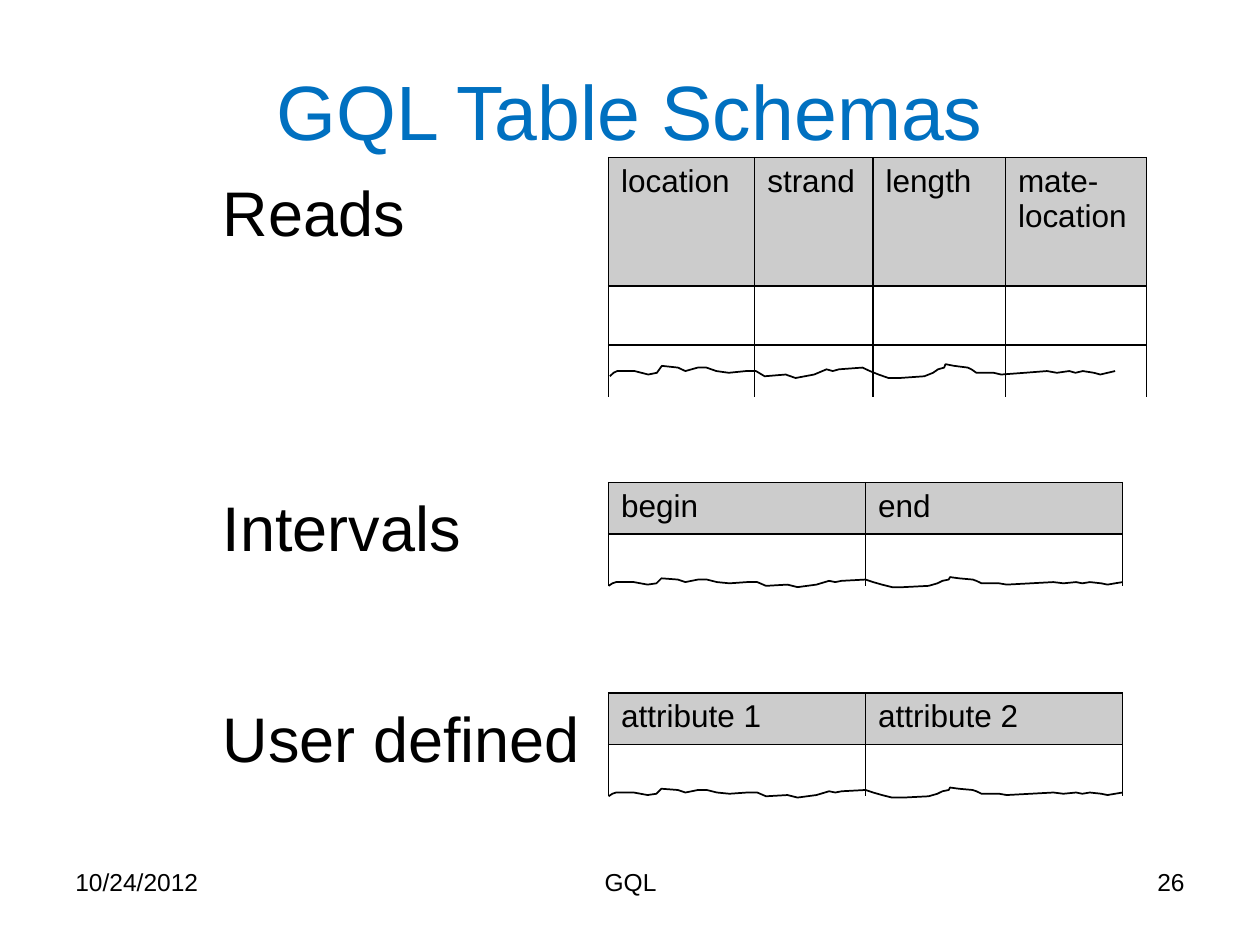
from dataclasses import dataclass

from lxml import etree
from pptx import Presentation
from pptx.dml.color import RGBColor
from pptx.enum.text import MSO_ANCHOR, MSO_AUTO_SIZE, PP_ALIGN
from pptx.oxml.ns import qn
from pptx.util import Inches, Pt

LEFT, CENTER, RIGHT = PP_ALIGN.LEFT, PP_ALIGN.CENTER, PP_ALIGN.RIGHT
TOP, BOTTOM = MSO_ANCHOR.TOP, MSO_ANCHOR.BOTTOM
FIT_SHAPE = MSO_AUTO_SIZE.SHAPE_TO_FIT_TEXT
FONT = "Arial"
BLACK, BLUE, GRAY = "000000", "0070C0", "CCCCCC"
TABLE_LEFT = 4.83
LABEL_LEFT = 1.67
FOOTER_TOP, FOOTER_HEIGHT = 6.83, 0.52
TEAR_WIDTH, TEAR_HEIGHT = 4.08, 0.08
TEAR_PROFILE = [
    (0, 0.07), (0.03, 0.05), (0.06, 0.04), (0.2, 0.04), (0.31, 0.06),
    (0.38, 0.05), (0.42, 0.01), (0.55, 0.02), (0.61, 0.04), (0.71, 0.02),
    (0.78, 0.02), (0.86, 0.04), (0.96, 0.05), (1.1, 0.04), (1.18, 0.04),
    (1.25, 0.07), (1.42, 0.06), (1.5, 0.08), (1.65, 0.06), (1.75, 0.03),
    (1.8, 0.04), (1.85, 0.03), (2.04, 0.02), (2.1, 0.04), (2.17, 0.06),
    (2.25, 0.08), (2.34, 0.08), (2.54, 0.07), (2.61, 0.05), (2.65, 0.03),
    (2.7, 0.02), (2.71, 0), (2.78, 0.01), (2.89, 0.02), (2.92, 0.03),
    (2.96, 0.05), (3.1, 0.05), (3.16, 0.06), (3.35, 0.05), (3.53, 0.04),
    (3.61, 0.05), (3.71, 0.04), (3.76, 0.05), (3.82, 0.04), (3.91, 0.05),
    (3.96, 0.06), (4.02, 0.05), (4.08, 0.04),
]


@dataclass
class Label:
    text: str
    left: float
    top: float
    width: float
    height: float
    size: int
    align: PP_ALIGN = LEFT


@dataclass
class Schema:
    name: str
    label_top: float
    label_width: float
    table_top: float
    headers: list[str]
    columns: list[float]
    rows: list[float]
    tear_left: float
    tear_top: float
    tear_width: float
    tear_height: float


SCHEMAS = [
    Schema("Reads", 1.33, 1.66, 1.25,
           ["location", "strand", "length", "mate-location"],
           [1.16, 0.94, 1.05, 1.12], [1.02, 0.47, 0.41],
           4.84, 2.89, 4.01, 0.11),
    Schema("Intervals", 3.83, 2.11, 3.83, ["begin", "end"],
           [2.04, 2.04], [0.41, 0.41],
           TABLE_LEFT, 4.58, TEAR_WIDTH, TEAR_HEIGHT),
    Schema("User defined", 5.5, 3.17, 5.5, ["attribute 1", "attribute 2"],
           [2.04, 2.04], [0.41, 0.41],
           TABLE_LEFT, 6.25, TEAR_WIDTH, TEAR_HEIGHT),
]
FOOTERS = [
    Label("10/24/2012", 0.5, FOOTER_TOP, 2.33, FOOTER_HEIGHT, 14),
    Label("GQL", 3.42, FOOTER_TOP, 3.17, FOOTER_HEIGHT, 14, CENTER),
    Label("26", 7.17, FOOTER_TOP, 2.33, FOOTER_HEIGHT, 14, RIGHT),
]


def color(value: str) -> RGBColor:
    return RGBColor.from_string(value)


def set_attributes(target, values: dict) -> None:
    for name, value in values.items():
        setattr(target, name, value)


def write(text_frame, text: str, size: int, font_color: str = BLACK,
          align: PP_ALIGN = LEFT) -> None:
    paragraph = text_frame.paragraphs[0]
    paragraph.alignment = align
    run = paragraph.add_run()
    run.text = text
    set_attributes(run.font, {"name": FONT, "size": Pt(size)})
    run.font.color.rgb = color(font_color)


def add_title(slide, text: str) -> None:
    title = slide.shapes.title
    set_attributes(title, {"left": Inches(0.5), "top": Inches(0.4),
                           "width": Inches(9), "height": Inches(0.94)})
    margins = {f"margin_{side}": Inches(0.1)
               for side in ("left", "right", "top", "bottom")}
    set_attributes(title.text_frame, {"vertical_anchor": BOTTOM, "word_wrap": True,
                                      "auto_size": FIT_SHAPE, **margins})
    write(title.text_frame, text, 44, BLUE, CENTER)


def add_label(slide, label: Label) -> None:
    shape = slide.shapes.add_textbox(Inches(label.left), Inches(label.top),
                                     Inches(label.width), Inches(label.height))
    set_attributes(shape.text_frame, {"word_wrap": True, "vertical_anchor": TOP})
    write(shape.text_frame, label.text, label.size, align=label.align)


def set_borders(cell, open_bottom: bool) -> None:
    properties = cell._tc.get_or_add_tcPr()
    for index, side in enumerate(("lnL", "lnR", "lnT", "lnB")):
        line = etree.Element(qn(f"a:{side}"), w=str(Pt(1)))
        if side == "lnB" and open_bottom:
            etree.SubElement(line, qn("a:noFill"))
        else:
            fill = etree.SubElement(line, qn("a:solidFill"))
            etree.SubElement(fill, qn("a:srgbClr"), val=BLACK)
        properties.insert(index, line)


def add_schema_table(slide, schema: Schema) -> None:
    frame = slide.shapes.add_table(
        len(schema.rows), len(schema.columns), Inches(TABLE_LEFT),
        Inches(schema.table_top), Inches(sum(schema.columns)), Inches(sum(schema.rows)))
    table = frame.table
    set_attributes(table, {"first_row": False, "horz_banding": False})
    for column, width in zip(table.columns, schema.columns):
        column.width = Inches(width)
    for index, (row, height) in enumerate(zip(table.rows, schema.rows)):
        row.height = Inches(height)
        for cell, header in zip(row.cells, schema.headers):
            if index == 0:
                cell.fill.solid()
                cell.fill.fore_color.rgb = color(GRAY)
                write(cell.text_frame, header, 18)
            else:
                cell.fill.background()
            set_borders(cell, index == len(schema.rows) - 1)


def add_tear(slide, schema: Schema) -> None:
    scale_x = schema.tear_width / TEAR_WIDTH
    scale_y = schema.tear_height / TEAR_HEIGHT
    points = [(Inches(schema.tear_left + x * scale_x),
               Inches(schema.tear_top + y * scale_y)) for x, y in TEAR_PROFILE]
    builder = slide.shapes.build_freeform(*points[0])
    builder.add_line_segments(points[1:], close=False)
    shape = builder.convert_to_shape()
    shape.shadow.inherit = False
    shape.fill.background()
    shape.line.color.rgb = color(BLACK)
    shape.line.width = Pt(1)


def main() -> None:
    presentation = Presentation()
    set_attributes(presentation, {"slide_width": Inches(10), "slide_height": Inches(7.5)})
    slide = presentation.slides.add_slide(presentation.slide_layouts[5])
    add_title(slide, "GQL Table Schemas")
    for schema in SCHEMAS:
        add_schema_table(slide, schema)
        add_tear(slide, schema)
        add_label(slide, Label(schema.name, LABEL_LEFT, schema.label_top,
                               schema.label_width, 0.71, 36))
    for footer in FOOTERS:
        add_label(slide, footer)
    presentation.save("out.pptx")


if __name__ == "__main__":
    main()
